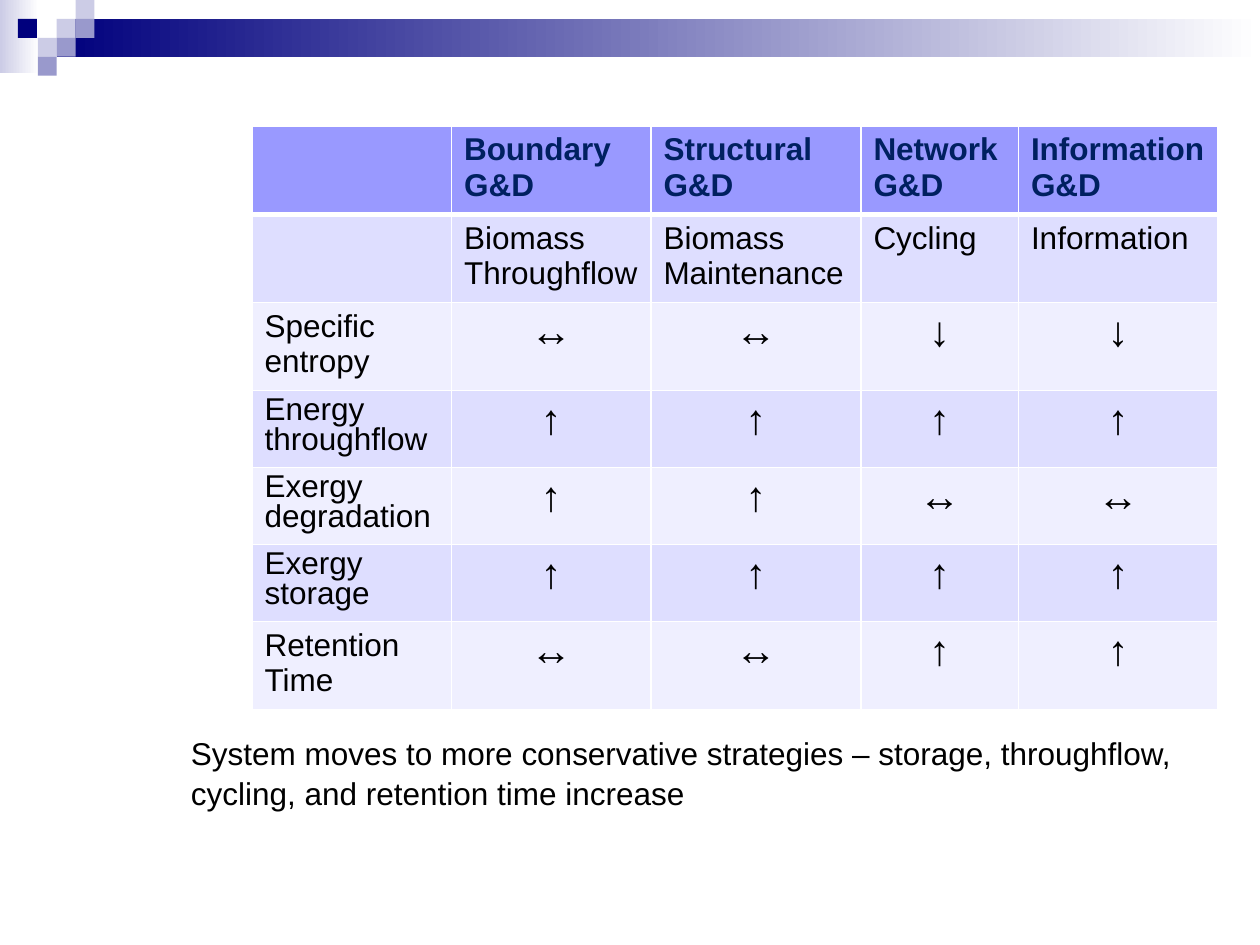
import pptx
import pptx.util
import pptx.dml.color
import pptx.enum.shapes
import pptx.enum.text
import pptx.oxml.ns
from lxml import etree

Pt = pptx.util.Pt
RGBColor = pptx.dml.color.RGBColor
qn = pptx.oxml.ns.qn

NAVY = RGBColor(0x00, 0x00, 0x7D)
LILAC = RGBColor(0xCC, 0xCC, 0xE6)
MAUVE = RGBColor(0x99, 0x99, 0xCC)
WHITE = RGBColor(0xFF, 0xFF, 0xFF)
BLACK = RGBColor(0x00, 0x00, 0x00)
HEADING = RGBColor(0x00, 0x20, 0x60)
HEADER_FILL = RGBColor(0x99, 0x99, 0xFF)
BANDS = [RGBColor(0xEF, 0xEF, 0xFF), RGBColor(0xDE, 0xDE, 0xFF)]

HEADER_FONT = {"size": Pt(18), "name": "Arial", "bold": True}
BODY_FONT = {"size": Pt(18), "name": "Arial", "bold": False}
ARROW_FONT = {"size": Pt(24), "name": "Arial", "bold": True}
TIMES_ARROW_FONT = {**ARROW_FONT, "name": "Times New Roman"}

COLUMN_WIDTHS = [114, 114, 120, 90, 114]
ROW_HEIGHTS = [50.4, 50.4, 50.4, 44, 44, 44, 50.4]
TIGHT_ROWS = (3, 4, 5)
ROWS = [
    ["", "Boundary G&D", "Structural G&D", "Network G&D", "Information G&D"],
    ["", "Biomass\nThroughflow", "Biomass\nMaintenance", "Cycling", "Information"],
    ["Specific entropy", "↔", "↔", "↓", "↓"],
    ["Energy throughflow", "↑", "↑", "↑", "↑"],
    ["Exergy degradation", "↑", "↑", "↔", "↔"],
    ["Exergy storage", "↑", "↑", "↑", "↑"],
    ["Retention Time", "↔", "↔", "↑", "↑"],
]
CAPTION = ("System moves to more conservative strategies – storage, throughflow, "
           "cycling, and retention time increase")


def set_font(font, values, color):
    for name, value in values.items():
        setattr(font, name, value)
    font.color.rgb = color


def add_block(s, left, top, width, height, color, fade=False):
    sp = s.shapes.add_shape(pptx.enum.shapes.MSO_SHAPE.RECTANGLE,
                            Pt(left), Pt(top), Pt(width), Pt(height))
    sp.shadow.inherit = False
    sp.line.fill.background()
    if fade:
        sp.fill.gradient()
        sp.fill.gradient_angle = 0
        for stop, rgb, position in zip(sp.fill.gradient_stops, (color, WHITE), (0, 1)):
            stop.color.rgb = rgb
            stop.position = position
    else:
        sp.fill.solid()
        sp.fill.fore_color.rgb = color


def add_banner(s, left, top, width):
    unit = 10.8
    add_block(s, left, top, 22.3, 41.8, LILAC, fade=True)
    add_block(s, left + 3 * unit, top + unit, width - 3 * unit, 2 * unit, NAVY, fade=True)
    squares = [(3, 1, LILAC), (4, 0, LILAC), (4, 1, MAUVE), (2, 2, LILAC),
               (0.95, 1, NAVY), (3, 2, MAUVE), (2, 3, MAUVE)]
    for column, row, color in squares:
        add_block(s, left + column * unit, top + row * unit, unit, unit, color)


def set_borders(cell, widths):
    for side, width in widths.items():
        line = etree.SubElement(cell._tc.get_or_add_tcPr(), qn(f"a:ln{side}"), w=str(Pt(width)))
        fill = etree.SubElement(line, qn("a:solidFill"))
        etree.SubElement(fill, qn("a:srgbClr"), val=str(WHITE))


def tighten(p):
    p.line_spacing = 0.85
    before = etree.SubElement(p._p.get_or_add_pPr(), qn("a:spcBef"))
    etree.SubElement(before, qn("a:spcPct"), val="20000")


def fill_cell(cell, text, row, column):
    set_borders(cell, {"L": 1, "R": 1, "T": 3 if row == 1 else 1, "B": 3 if row == 0 else 1})
    cell.fill.solid()
    cell.fill.fore_color.rgb = BANDS[row % 2] if row else HEADER_FILL
    is_arrow = row > 1 and column > 0
    if is_arrow:
        values = ARROW_FONT if text == "↑" else TIMES_ARROW_FONT
    else:
        values = BODY_FONT if row else HEADER_FONT
    cell.text = text
    for p in cell.text_frame.paragraphs:
        if is_arrow:
            p.alignment = pptx.enum.text.PP_ALIGN.CENTER
        elif row in TIGHT_ROWS:
            tighten(p)
        for r in p.runs:
            set_font(r.font, values, BLACK if row else HEADING)


def add_strategy_table(s, left, top):
    table = s.shapes.add_table(len(ROWS), len(COLUMN_WIDTHS), Pt(left), Pt(top),
                               Pt(sum(COLUMN_WIDTHS)), Pt(sum(ROW_HEIGHTS))).table
    for column, width in zip(table.columns, COLUMN_WIDTHS):
        column.width = Pt(width)
    for row, height in zip(table.rows, ROW_HEIGHTS):
        row.height = Pt(height)
    for i, texts in enumerate(ROWS):
        for j, text in enumerate(texts):
            fill_cell(table.cell(i, j), text, i, j)


def add_caption(s, left, top, width, height):
    tf = s.shapes.add_textbox(Pt(left), Pt(top), Pt(width), Pt(height)).text_frame
    tf.word_wrap = True
    tf.margin_right = Pt(36)
    p = tf.paragraphs[0]
    p.line_spacing = 1.05
    r = p.add_run()
    r.text = CAPTION
    set_font(r.font, BODY_FONT, BLACK)


def main():
    prs = pptx.Presentation()
    prs.slide_width, prs.slide_height = Pt(720), Pt(540)
    s = prs.slides.add_slide(prs.slide_layouts[6])
    add_banner(s, 0, 0, 720)
    add_strategy_table(s, 144, 72)
    add_caption(s, 102, 415, 636, 65.5)
    prs.save("out.pptx")


if __name__ == "__main__":
    main()
